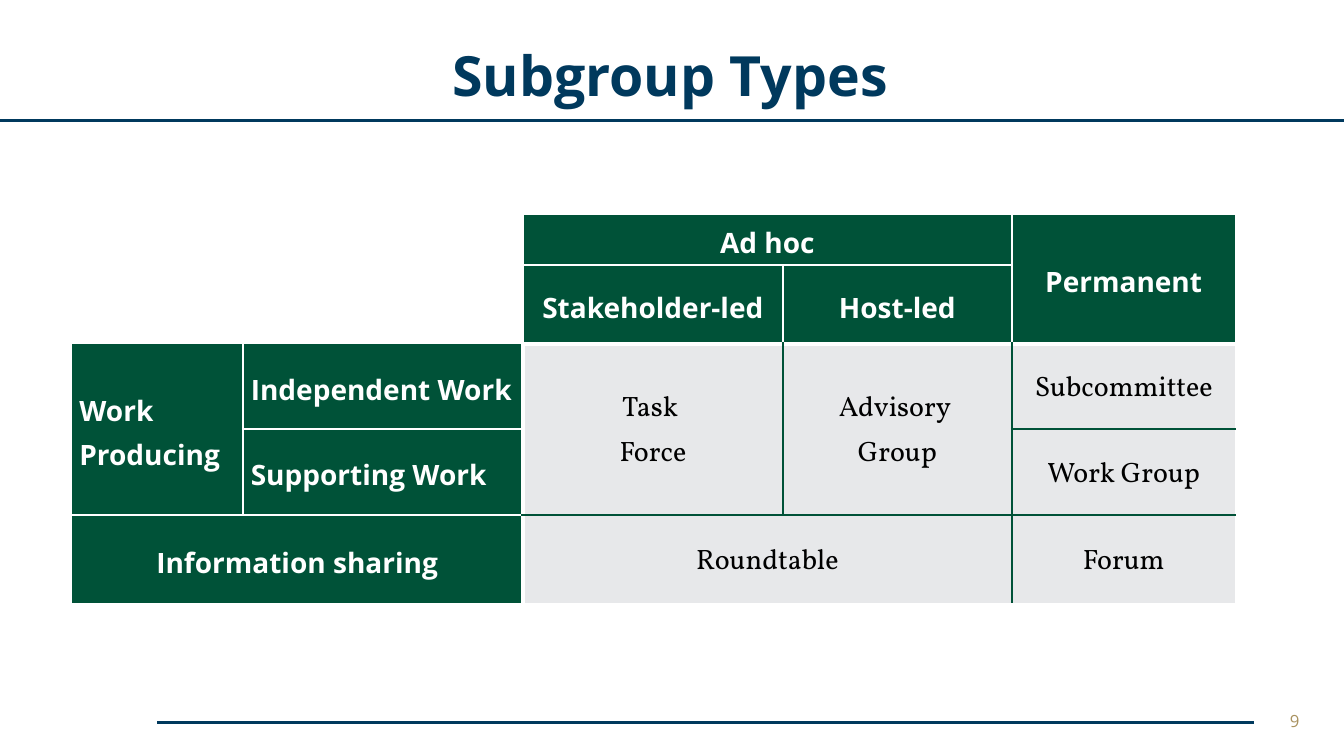
from dataclasses import dataclass

from lxml.etree import SubElement
from pptx import Presentation
from pptx.dml.color import RGBColor as Rgb
from pptx.enum.shapes import MSO_CONNECTOR as Connector
from pptx.enum.text import MSO_ANCHOR as Anchor, PP_ALIGN as Align
from pptx.oxml.ns import qn
from pptx.util import Cm, Pt


@dataclass(frozen=True)
class Theme:
    navy: str = "00395D"
    green: str = "005238"
    grey: str = "E7E8EA"
    gold: str = "A99260"
    white: str = "FFFFFF"
    black: str = "000000"
    sans: str = "Open Sans"
    serif: str = "Vollkorn"
    title_size: float = 39.6
    table_size: float = 20
    number_size: float = 12


theme = Theme()


def write_text(frame, text, *, font, size, color, bold=False,
               align=Align.CENTER, spacing=1.0):
    frame.word_wrap = True
    paragraph = frame.paragraphs[0]
    paragraph.text = text
    paragraph.alignment = align
    paragraph.line_spacing = spacing
    for run in paragraph.runs:
        run.font.name = font
        run.font.size = Pt(size)
        run.font.bold = bold
        run.font.color.rgb = Rgb.from_string(color)


def add_border(cell, side, color, width):
    properties = cell._tc.get_or_add_tcPr()
    line = SubElement(properties, qn(f"a:ln{side}"), w=str(Pt(width)))
    fill = SubElement(line, qn("a:solidFill"))
    SubElement(fill, qn("a:srgbClr"), val=color)


presentation = Presentation()
presentation.slide_width = Cm(33.87)
presentation.slide_height = Cm(19.05)
slide = presentation.slides.add_slide(presentation.slide_layouts[6])

# Rules under the title and above the footer
for left, right, height in [(0, 33.87, 3.03), (3.96, 31.6, 18.2)]:
    rule = slide.shapes.add_connector(
        Connector.STRAIGHT, Cm(left), Cm(height), Cm(right), Cm(height))
    rule.line.color.rgb = Rgb.from_string(theme.navy)
    rule.line.width = Pt(2.25)
    SubElement(rule._element.spPr, qn("a:effectLst"))

# Title and slide number
labels = [
    ("Subgroup Types", (1.27, 1.02, 31.24, 1.9),
     dict(font=theme.sans, size=theme.title_size, color=theme.navy,
          bold=True, spacing=0.9)),
    ("9", (24.97, 17.65, 8.03, 1.02),
     dict(font=theme.sans, size=theme.number_size, color=theme.gold,
          align=Align.RIGHT)),
]
for text, place, text_format in labels:
    box = slide.shapes.add_textbox(*map(Cm, place))
    box.text_frame.vertical_anchor = Anchor.MIDDLE
    write_text(box.text_frame, text, **text_format)

# Table grid
column_widths = [4.32, 7.06, 6.55, 5.77, 5.64]
row_heights = [1.27, 1.98, 2.16, 2.16, 2.24]
table = slide.shapes.add_table(
    len(row_heights), len(column_widths), Cm(1.8), Cm(5.41),
    Cm(sum(column_widths)), Cm(sum(row_heights))).table
table.first_row = False
table.horz_banding = False
for column, width in zip(table.columns, column_widths):
    column.width = Cm(width)
for row, height in zip(table.rows, row_heights):
    row.height = Cm(height)

# Regions: row, column, rows spanned, columns spanned, kind, text, alignment
regions = [
    (0, 0, 2, 2, "blank", "", Align.CENTER),
    (0, 2, 1, 2, "header", "Ad hoc", Align.CENTER),
    (0, 4, 2, 1, "header", "Permanent", Align.CENTER),
    (1, 2, 1, 1, "header", "Stakeholder-led", Align.CENTER),
    (1, 3, 1, 1, "header", "Host-led", Align.CENTER),
    (2, 0, 2, 1, "header", "Work Producing", Align.LEFT),
    (2, 1, 1, 1, "header", "Independent Work", Align.LEFT),
    (2, 2, 2, 1, "body", "Task \vForce", Align.CENTER),
    (2, 3, 2, 1, "body", "Advisory \vGroup", Align.CENTER),
    (2, 4, 1, 1, "body", "Subcommittee", Align.CENTER),
    (3, 1, 1, 1, "header", "Supporting Work", Align.LEFT),
    (3, 4, 1, 1, "body", "Work Group", Align.CENTER),
    (4, 0, 1, 2, "header", "Information sharing", Align.CENTER),
    (4, 2, 1, 2, "body", "Roundtable", Align.CENTER),
    (4, 4, 1, 1, "body", "Forum", Align.CENTER),
]
kinds = {(r, c): kind
         for top, left, rows, columns, kind, *_ in regions
         for r in range(top, top + rows)
         for c in range(left, left + columns)}

# Borders depend on the kinds of cell that meet
border_styles = {
    ("header", "header"): (theme.white, 1.5),
    ("body", "body"): (theme.green, 1.5),
    ("header", "body"): (theme.white, 3),
    ("body", "header"): (theme.white, 3),
}
outer_border = (theme.white, 1)
fills = {"header": theme.green, "body": theme.grey}
text_formats = {
    "header": dict(font=theme.sans, color=theme.white, bold=True),
    "body": dict(font=theme.serif, color=theme.black),
}

# Table cells
for top, left, rows, columns, kind, text, align in regions:
    origin = table.cell(top, left)
    if rows * columns > 1:
        origin.merge(table.cell(top + rows - 1, left + columns - 1))
    bottom, right = top + rows, left + columns
    neighbours = {"L": (top, left - 1), "R": (top, right),
                  "T": (top - 1, left), "B": (bottom, left)}
    for r in range(top, bottom):
        for c in range(left, right):
            cell = table.cell(r, c)
            touches = {"L": c == left, "R": c == right - 1,
                       "T": r == top, "B": r == bottom - 1}
            for side, neighbour in neighbours.items():
                if touches[side] or cell.is_merge_origin:
                    pair = (kind, kinds.get(neighbour))
                    add_border(cell, side,
                               *border_styles.get(pair, outer_border))
            if kind == "blank":
                cell.fill.background()
            else:
                cell.fill.solid()
                cell.fill.fore_color.rgb = Rgb.from_string(fills[kind])
    origin.vertical_anchor = Anchor.MIDDLE
    origin.margin_left = origin.margin_right = Cm(0.2)
    origin.margin_top = origin.margin_bottom = Cm(0.03)
    if text:
        write_text(origin.text_frame, text, size=theme.table_size,
                   align=align, spacing=1.15, **text_formats[kind])

presentation.save("out.pptx")
